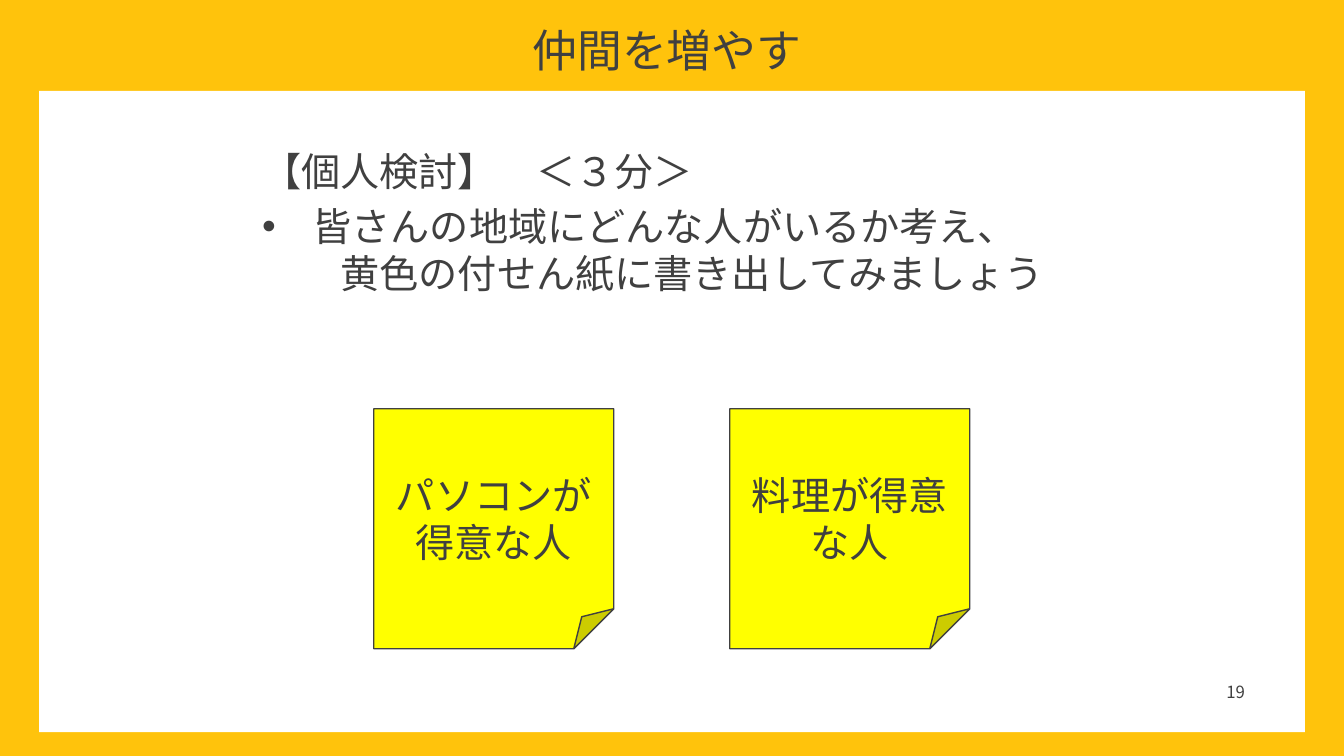
from dataclasses import dataclass

from lxml import etree
from pptx import Presentation
from pptx.dml.color import RGBColor
from pptx.enum.shapes import MSO_SHAPE
from pptx.enum.text import MSO_ANCHOR, MSO_AUTO_SIZE, PP_ALIGN
from pptx.oxml.ns import qn
from pptx.util import Pt

RECTANGLE, FOLDED_CORNER = MSO_SHAPE.RECTANGLE, MSO_SHAPE.FOLDED_CORNER
TOP, MIDDLE = MSO_ANCHOR.TOP, MSO_ANCHOR.MIDDLE
CENTER, RIGHT, JUSTIFY = PP_ALIGN.CENTER, PP_ALIGN.RIGHT, PP_ALIGN.JUSTIFY
NO_AUTOFIT = MSO_AUTO_SIZE.NONE

SLIDE_WIDTH, SLIDE_HEIGHT = 960, 540
TITLE_AND_CONTENT = 1


@dataclass(frozen=True)
class Theme:
    font: str = "Noto Sans CJK JP"
    text: str = "404040"
    frame: str = "FFC30C"
    paper: str = "FFFFFF"
    note: str = "FFFF00"
    title_size: float = 32
    title_leading: float = 37
    body_size: float = 28
    body_leading: float = 33.5
    number_size: float = 12
    number_leading: float = 15


class SlideBuilder:
    def __init__(self, slide, theme):
        self.slide = slide
        self.theme = theme

    def place(self, shape, left, top, width, height):
        shape.left, shape.top = Pt(left), Pt(top)
        shape.width, shape.height = Pt(width), Pt(height)

    def prepare_frame(self, frame, anchor, insets=(7.2, 3.6, 7.2, 3.6)):
        frame.word_wrap = True
        frame.auto_size = NO_AUTOFIT
        frame.vertical_anchor = anchor
        frame.margin_left, frame.margin_top, frame.margin_right, frame.margin_bottom = map(Pt, insets)

    def format_paragraph(self, para, size, leading, align, after=0):
        para.alignment = align
        para.line_spacing = Pt(leading)
        para.space_before = Pt(0)
        para.space_after = Pt(after)
        for span in para.runs:
            span.font.size = Pt(size)
            span.font.name = self.theme.font
            span.font.color.rgb = RGBColor.from_string(self.theme.text)
            east_asian = etree.SubElement(span.font._element, qn("a:ea"))
            east_asian.set("typeface", self.theme.font)

    def panel(self, layer, color, *bounds):
        """Add a plain rectangle behind the placeholders; layer 0 is the lowest."""
        box = self.slide.shapes.add_shape(RECTANGLE, *map(Pt, bounds))
        box.shadow.inherit = False
        box.fill.solid()
        box.fill.fore_color.rgb = RGBColor.from_string(color)
        box.line.fill.background()
        self.slide.shapes._spTree.insert(2 + layer, box._element)

    def title(self, text, *bounds):
        box = self.slide.shapes.title
        self.place(box, *bounds)
        self.prepare_frame(box.text_frame, TOP)
        box.text_frame.text = text
        self.format_paragraph(box.text_frame.paragraphs[0], self.theme.title_size,
                              self.theme.title_leading, CENTER)

    def body(self, lines, *bounds):
        """Each line is (text, bullet, left margin, first-line indent, space after)."""
        box = self.slide.placeholders[1]
        self.place(box, *bounds)
        frame = box.text_frame
        self.prepare_frame(frame, MIDDLE, (7.2, 2.9, 7.2, 5.8))
        frame.text = "\n".join(line[0] for line in lines)
        for para, (_, bullet, margin, indent, after) in zip(frame.paragraphs, lines):
            self.format_paragraph(para, self.theme.body_size, self.theme.body_leading, JUSTIFY, after)
            properties = para._p.get_or_add_pPr()
            properties.set("marL", str(Pt(margin)))
            properties.set("indent", str(Pt(indent)))
            if bullet:
                etree.SubElement(properties, qn("a:buFont")).set("typeface", "Arial")
                etree.SubElement(properties, qn("a:buChar")).set("char", bullet)
            else:
                etree.SubElement(properties, qn("a:buNone"))

    def sticky_note(self, text, *bounds):
        box = self.slide.shapes.add_shape(FOLDED_CORNER, *map(Pt, bounds))
        box.shadow.inherit = False
        box.fill.solid()
        box.fill.fore_color.rgb = RGBColor.from_string(self.theme.note)
        box.line.color.rgb = RGBColor.from_string(self.theme.text)
        box.line.width = Pt(1)
        self.prepare_frame(box.text_frame, MIDDLE, (7.2, 17.3, 7.2, 3.6))
        box.text_frame.text = text
        self.format_paragraph(box.text_frame.paragraphs[0], self.theme.body_size,
                              self.theme.body_leading, CENTER)

    def page_number(self, text, *bounds):
        box = self.slide.shapes.add_textbox(*map(Pt, bounds))
        self.prepare_frame(box.text_frame, MIDDLE)
        box.text_frame.text = text
        self.format_paragraph(box.text_frame.paragraphs[0], self.theme.number_size,
                              self.theme.number_leading, RIGHT)


def main():
    deck = Presentation()
    deck.slide_width, deck.slide_height = Pt(SLIDE_WIDTH), Pt(SLIDE_HEIGHT)
    theme = Theme()
    page = SlideBuilder(deck.slides.add_slide(deck.slide_layouts[TITLE_AND_CONTENT]), theme)

    # Yellow frame around a white sheet
    page.panel(0, theme.frame, 0, 0, SLIDE_WIDTH, SLIDE_HEIGHT)
    page.panel(1, theme.paper, 28, 65, SLIDE_WIDTH - 2 * 28, 458)

    # Title and task
    page.title("仲間を増やす", 131, 13.7, 691, 51)
    page.body([
        ("【個人検討】　＜３分＞", None, 0, 0, 6),
        ("皆さんの地域にどんな人がいるか考え、", "•", 36, -36, 0),
        ("黄色の付せん紙に書き出してみましょう", None, 56, 0, 0),
    ], 180, 73, 600, 174)

    # Example sticky notes
    note_side, note_step = 171.4, 254.3
    for column, text in enumerate(["パソコンが得意な人", "料理が得意な人"]):
        page.sticky_note(text, 267 + column * note_step, 292, note_side, note_side)

    # Page number
    page.page_number("19", 680.4, 479.5, 216, 28.8)

    deck.save("out.pptx")


if __name__ == "__main__":
    main()
